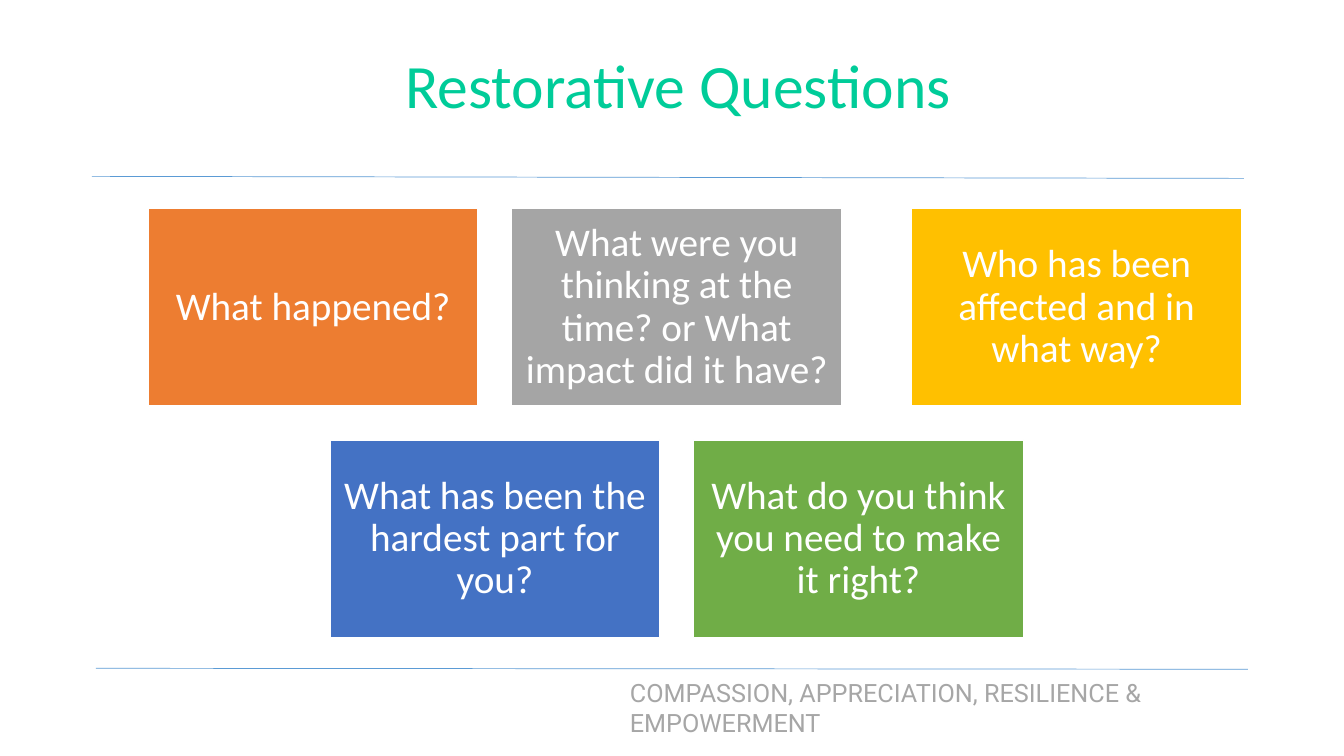
from pptx import Presentation
from pptx.dml.color import RGBColor
from pptx.enum.shapes import MSO_CONNECTOR, MSO_SHAPE
from pptx.enum.text import MSO_ANCHOR, MSO_AUTO_SIZE, PP_ALIGN
from pptx.oxml.ns import qn
from pptx.util import Inches, Pt
from lxml.etree import SubElement

HUES = {
    "title": "00CC99", "rule": "5B9BD5", "motto": "A6A6A6", "white": "FFFFFF",
    "orange": "ED7D31", "gray": "A5A5A5", "gold": "FFC000",
    "blue": "4472C4", "green": "70AD47",
}


def hue(name):
    return RGBColor.from_string(HUES[name])


class Deck:
    """Draws on a grid of 100 columns by 100 rows."""

    def __init__(self):
        self.prs = Presentation()
        self.prs.slide_width = Inches(13.33)
        self.prs.slide_height = Inches(7.5)
        self.slide = self.prs.slides.add_slide(self.prs.slide_layouts[5])
        self.shapes = self.slide.shapes

    def col(self, num):
        return round(self.prs.slide_width * num / 100)

    def row(self, num):
        return round(self.prs.slide_height * num / 100)

    def area(self, left, top, wide, high):
        return self.col(left), self.row(top), self.col(wide), self.row(high)

    def label(self, shape, text, look, frame, para):
        body = shape.text_frame
        body.text = text
        first = body.paragraphs[0]
        font = {"name": look[0], "size": Pt(look[1])}
        for item, vals in ((body, frame), (first, para), (first.runs[0].font, font)):
            for key, val in vals.items():
                setattr(item, key, val)
        first.runs[0].font.color.rgb = hue(look[2])
        return first

    def title(self, text, *spot):
        shape = self.shapes.title
        shape.left, shape.top, shape.width, shape.height = self.area(*spot)
        self.label(shape, text, ("Calibri", 44, "title"),
                   {"vertical_anchor": MSO_ANCHOR.MIDDLE, "word_wrap": True,
                    "auto_size": MSO_AUTO_SIZE.NONE},
                   {"alignment": PP_ALIGN.LEFT, "line_spacing": 0.9})

    def rule(self, left, top, right, end):
        line = self.shapes.add_connector(
            MSO_CONNECTOR.STRAIGHT, self.col(left), self.row(top),
            self.col(right), self.row(end))
        line.line.color.rgb = hue("rule")
        line.line.width = Pt(0.5)
        SubElement(line._element.spPr, qn("a:effectLst"))

    def motto(self, text, *spot):
        shape = self.shapes.add_textbox(*self.area(*spot))
        first = self.label(shape, text, ("Roboto", 18, "motto"),
                           {"word_wrap": True}, {"alignment": PP_ALIGN.LEFT})
        first._p.get_or_add_pPr().set("marL", str(Inches(0.12)))

    def card(self, text, fill, *spot):
        shape = self.shapes.add_shape(MSO_SHAPE.RECTANGLE, *self.area(*spot))
        shape.shadow.inherit = False
        shape.fill.solid()
        shape.fill.fore_color.rgb = hue(fill)
        shape.line.color.rgb = hue("white")
        shape.line.width = Pt(1)
        frame = {f"margin_{side}": Inches(0.12)
                 for side in ("left", "top", "right", "bottom")}
        frame |= {"vertical_anchor": MSO_ANCHOR.MIDDLE, "word_wrap": True}
        self.label(shape, text, ("Calibri", 28, "white"), frame,
                   {"alignment": PP_ALIGN.CENTER, "line_spacing": 0.9})


def main():
    deck = Deck()

    # Rules, motto and title
    deck.rule(6.83, 23.33, 92.55, 23.6)
    deck.rule(7.13, 88.4, 92.85, 88.53)
    deck.motto("COMPASSION, APPRECIATION, RESILIENCE & EMPOWERMENT",
               45.23, 88.93, 50.7, 9.47)
    deck.title("Restorative Questions", 29.4, 2, 63.15, 19.33)

    # Question cards: step across, row, text, fill
    cards = [
        (0, 0, "What happened?", "orange"),
        (1, 0, "What were you thinking at the time? or What impact did it have?",
         "gray"),
        (2.1, 0, "Who has been affected and in what way?", "gold"),
        (0.5, 1, "What has been the hardest part for you?", "blue"),
        (1.5, 1, "What do you think you need to make it right?", "green"),
    ]
    for step, tier, text, fill in cards:
        deck.card(text, fill, 11.03 + 27.05 * step, 27.6 + 30.6 * tier,
                  24.53, 26.13)

    deck.prs.save("out.pptx")


if __name__ == "__main__":
    main()
